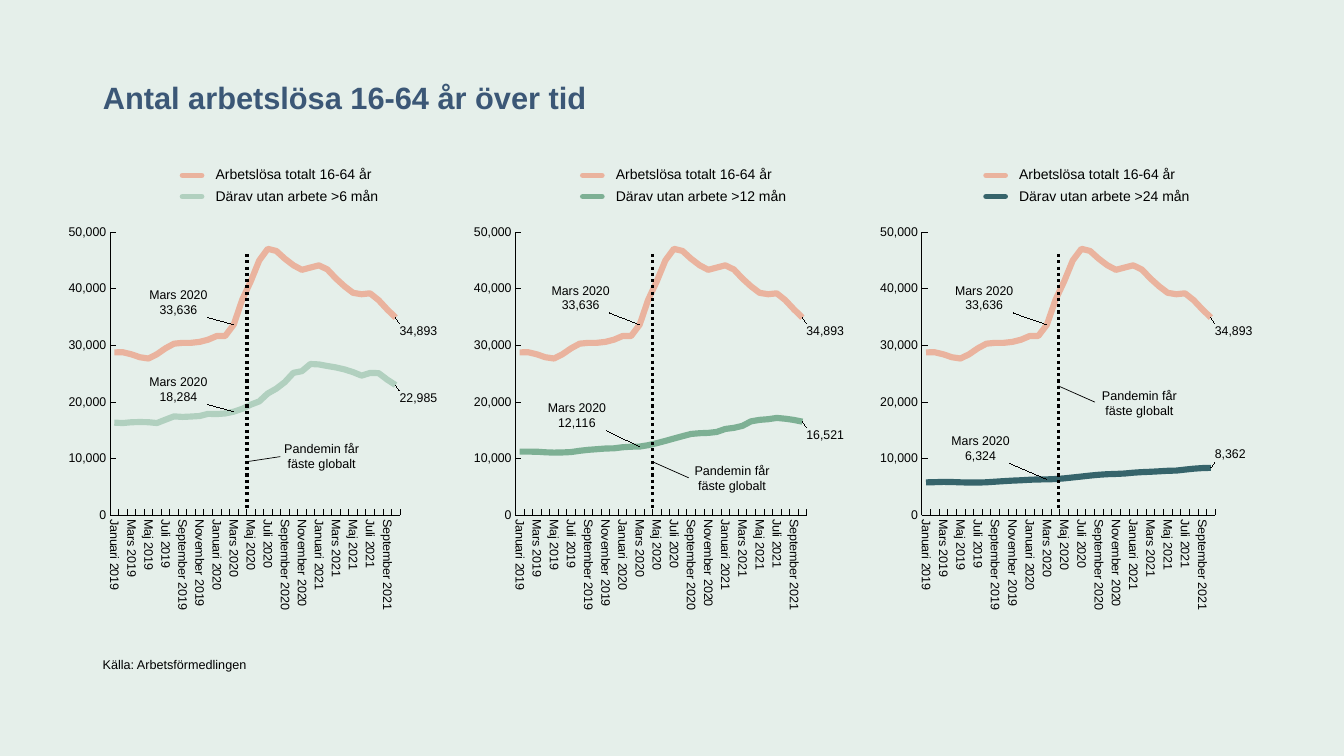
from pptx import Presentation, oxml, util as u
from pptx.chart import data as cd
from pptx.dml.color import RGBColor
from pptx.enum import chart as ch, dml, shapes, text
from pptx.oxml import ns

Inches, Pt = u.Inches, u.Pt
INK = {"back": "E5EFEA", "title": "3B5776", "text": "000000", "all": "EAB39E",
       "6": "B1D0BF", "12": "7DB094", "24": "36646B"}
INK = {key: RGBColor.from_string(code) for key, code in INK.items()}

months = ["Januari", "Februari", "Mars", "April", "Maj", "Juni", "Juli", "Augusti",
          "September", "Oktober", "November", "December"]
dates = [f"{month} {year}" for year in (2019, 2020, 2021) for month in months][:34]
MARCH, LAST = dates.index("Mars 2020"), len(dates) - 1

total = [28754, 28776, 28410, 27893, 27671, 28429, 29471, 30286, 30435, 30435, 30608, 30992,
         31631, 31638, 33636, 38049, 41283, 44985, 47034, 46662, 45288, 44131, 43328, 43729,
         44116, 43383, 41785, 40416, 39266, 39016, 39181, 37976, 36351, 34893]
over6 = [16347, 16277, 16421, 16463, 16425, 16281, 16875, 17453, 17356, 17425, 17516, 17903,
         17861, 17965, 18284, 18785, 19521, 20102, 21500, 22347, 23507, 25138, 25436, 26700,
         26623, 26348, 26094, 25744, 25266, 24653, 25119, 25090, 23952, 22985]
over12 = [11222, 11220, 11210, 11106, 11052, 11080, 11148, 11377, 11543, 11657, 11776, 11806,
          11999, 12096, 12116, 12363, 12716, 13118, 13539, 13954, 14347, 14479, 14535, 14701,
          15226, 15425, 15777, 16581, 16838, 16954, 17179, 17043, 16821, 16521]
over24 = [5798, 5835, 5880, 5862, 5801, 5762, 5760, 5811, 5917, 6017, 6109, 6171,
          6263, 6319, 6324, 6388, 6507, 6668, 6824, 6997, 7139, 7237, 7290, 7362,
          7508, 7606, 7671, 7750, 7840, 7878, 8050, 8215, 8316, 8362]

# Label shifts (x, y) are shares of the chart size: March total, end total, March part, end part
panels = [
    dict(span="6", part=over6, left=0.68, width=0.788, key=1.81, wave=2.45,
         note=(2.68, 4.23), lead=(2.78, 4.53, 4.58),
         shifts=[(-0.24, -0.05), (0, 0.03), (-0.24, -0.05), (0, 0.03)]),
    dict(span="12", part=over12, left=4.7, width=0.792, key=5.78, wave=6.47,
         note=(6.75, 4.45), lead=(6.83, 4.74, 4.58),
         shifts=[(-0.25, -0.06), (0, 0.03), (-0.26, -0.07), (0, 0.03)]),
    dict(span="24", part=over24, left=8.73, width=0.798, key=9.78, wave=10.5,
         note=(10.79, 3.71), lead=(10.86, 3.99, 3.83),
         shifts=[(-0.26, -0.06), (0, 0.03), (-0.27, -0.07), (0, -0.03)]),
]

LABEL = """<c:dLbl><c:idx val="{idx}"/><c:layout><c:manualLayout><c:x val="{x}"/><c:y val="{y}"/>
</c:manualLayout></c:layout><c:dLblPos val="r"/><c:showLegendKey val="0"/><c:showVal val="1"/>
<c:showCatName val="{cat}"/><c:showSerName val="0"/><c:showPercent val="0"/>
<c:showBubbleSize val="0"/><c:separator>\n</c:separator></c:dLbl>"""
LABELS = """<c:dLbls {names}>{items}<c:spPr><a:noFill/><a:ln><a:noFill/></a:ln></c:spPr>
<c:showLegendKey val="0"/><c:showVal val="0"/><c:showCatName val="0"/><c:showSerName val="0"/>
<c:showPercent val="0"/><c:showBubbleSize val="0"/><c:extLst>
<c:ext uri="{{CE6537A1-D6FC-4f65-9D91-7224C49458BB}}"
 xmlns:c15="http://schemas.microsoft.com/office/drawing/2012/chart">
<c15:showLeaderLines val="1"/><c15:leaderLines><c:spPr><a:ln w="6350"><a:solidFill>
<a:srgbClr val="000000"/></a:solidFill></a:ln></c:spPr></c15:leaderLines></c:ext></c:extLst></c:dLbls>"""
LAYOUT = """<c:layout {names}><c:manualLayout><c:layoutTarget val="inner"/><c:xMode val="edge"/>
<c:yMode val="edge"/><c:x val="0.088"/><c:y val="0.06"/><c:w val="{width}"/><c:h val="0.643"/>
</c:manualLayout></c:layout>"""
NAMES = ns.nsdecls("c", "a")

deck = Presentation()
deck.slide_width, deck.slide_height = Inches(13.33), Inches(7.5)
slide = deck.slides.add_slide(deck.slide_layouts[5])
slide.background.fill.solid()
slide.background.fill.fore_color.rgb = INK["back"]


def write(shape, lines, size, anchor, align=text.PP_ALIGN.LEFT, color="text", bold=False):
    frame = shape.text_frame
    frame.word_wrap = True
    frame.auto_size = text.MSO_AUTO_SIZE.NONE
    frame.vertical_anchor = anchor
    for i, words in enumerate(lines):
        para = frame.add_paragraph() if i else frame.paragraphs[0]
        para.alignment = align
        para.space_after = Pt(4 if i < len(lines) - 1 else 0)
        run = para.add_run()
        run.text = words
        font = run.font
        font.name, font.size, font.bold = "Arial", Pt(size), bold
        font.color.rgb = INK[color]


def draw(x1, y1, x2, y2, color, weight):
    line = slide.shapes.add_connector(shapes.MSO_CONNECTOR.STRAIGHT, Inches(x1), Inches(y1),
                                      Inches(x2), Inches(y2))
    line.line.color.rgb = INK[color]
    line.line.width = Pt(weight)
    line._element.spPr.append(oxml.parse_xml(f"<a:effectLst {ns.nsdecls('a')}/>"))
    return line


TOP, MID, LOW = text.MSO_ANCHOR.TOP, text.MSO_ANCHOR.MIDDLE, text.MSO_ANCHOR.BOTTOM
title = slide.shapes.title
title.left, title.top, title.width, title.height = map(Inches, (0.92, 0.4, 11.5, 0.8))
write(title, ["Antal arbetslösa 16-64 år över tid"], 22, LOW, color="title", bold=True)
title.text_frame.paragraphs[0].line_spacing = Pt(31)

source = slide.shapes.add_textbox(Inches(0.92), Inches(6.47), Inches(2.92), Inches(0.25))
write(source, ["Källa: Arbetsförmedlingen"], 9, LOW)

for panel in panels:
    span = panel["span"]
    legend = ["Arbetslösa totalt 16-64 år", f"Därav utan arbete >{span} mån"]
    data = cd.CategoryChartData(number_format="#,##0")
    data.categories = dates
    data.add_series(legend[0], total)
    data.add_series(legend[1], panel["part"])
    chart = slide.shapes.add_chart(ch.XL_CHART_TYPE.LINE, Inches(panel["left"]), Inches(2.04),
                                   Inches(3.74), Inches(4.37), data).chart
    chart.has_legend = chart.has_title = False
    chart.font.name, chart.font.size = "Arial", Pt(9)
    chart.font.color.rgb = INK["text"]
    plot = chart.plots[0]
    plot.vary_by_categories = False
    area = plot._element.getparent()
    for old in area.findall(ns.qn("c:layout")):
        area.remove(old)
    area.insert(0, oxml.parse_xml(LAYOUT.format(names=NAMES, width=panel["width"])))

    for axis in (chart.category_axis, chart.value_axis):
        axis.has_major_gridlines = False
        axis.major_tick_mark = ch.XL_TICK_MARK.INSIDE
        axis.minor_tick_mark = ch.XL_TICK_MARK.NONE
        axis.format.line.color.rgb = INK["text"]
        axis.format.line.width = Pt(0.5)
        axis.tick_labels.font.size = Pt(9)
    chart.value_axis.minimum_scale, chart.value_axis.maximum_scale = 0, 50000
    chart.value_axis.major_unit = 10000
    chart.value_axis.tick_labels.number_format = "#,##0"
    chart.value_axis.tick_labels.number_format_is_linked = False
    months_axis = chart.category_axis._element
    months_axis.find(ns.qn("c:txPr")).find(ns.qn("a:bodyPr")).set("rot", "5400000")
    months_axis.find(ns.qn("c:noMultiLvlLbl")).addprevious(
        oxml.parse_xml(f'<c:tickLblSkip {NAMES} val="2"/>'))

    for i, (series, color) in enumerate(zip(plot.series, ("all", span))):
        series.smooth = False
        series.marker.style = ch.XL_MARKER_STYLE.NONE
        series.format.line.color.rgb = INK[color]
        series.format.line.width = Pt(4.5)
        items = "".join(LABEL.format(idx=idx, x=x, y=y, cat=int(idx == MARCH))
                        for idx, (x, y) in zip((MARCH, LAST), panel["shifts"][2 * i:]))
        series._element.find(ns.qn("c:cat")).addprevious(
            oxml.parse_xml(LABELS.format(names=NAMES, items=items)))
        y = 1.74 + 0.21 * i
        key = draw(panel["key"], y, panel["key"] + 0.19, y, color, 4)
        key.line._get_or_add_ln().set("cap", "rnd")

    box = slide.shapes.add_textbox(Inches(panel["key"] + 0.23), Inches(1.59), Inches(2), Inches(0.49))
    write(box, legend, 10, TOP)
    wave = draw(panel["wave"], 2.52, panel["wave"], 5.04, "text", 2.25)
    wave.line.dash_style = dml.MSO_LINE.ROUND_DOT
    note = slide.shapes.add_textbox(*map(Inches, (*panel["note"], 1.02, 0.58)))
    write(note, ["Pandemin får fäste globalt"], 9, MID, text.PP_ALIGN.CENTER)
    x, y, end = panel["lead"]
    draw(x, y, panel["wave"], end, "text", 0.5)

deck.save("out.pptx")
